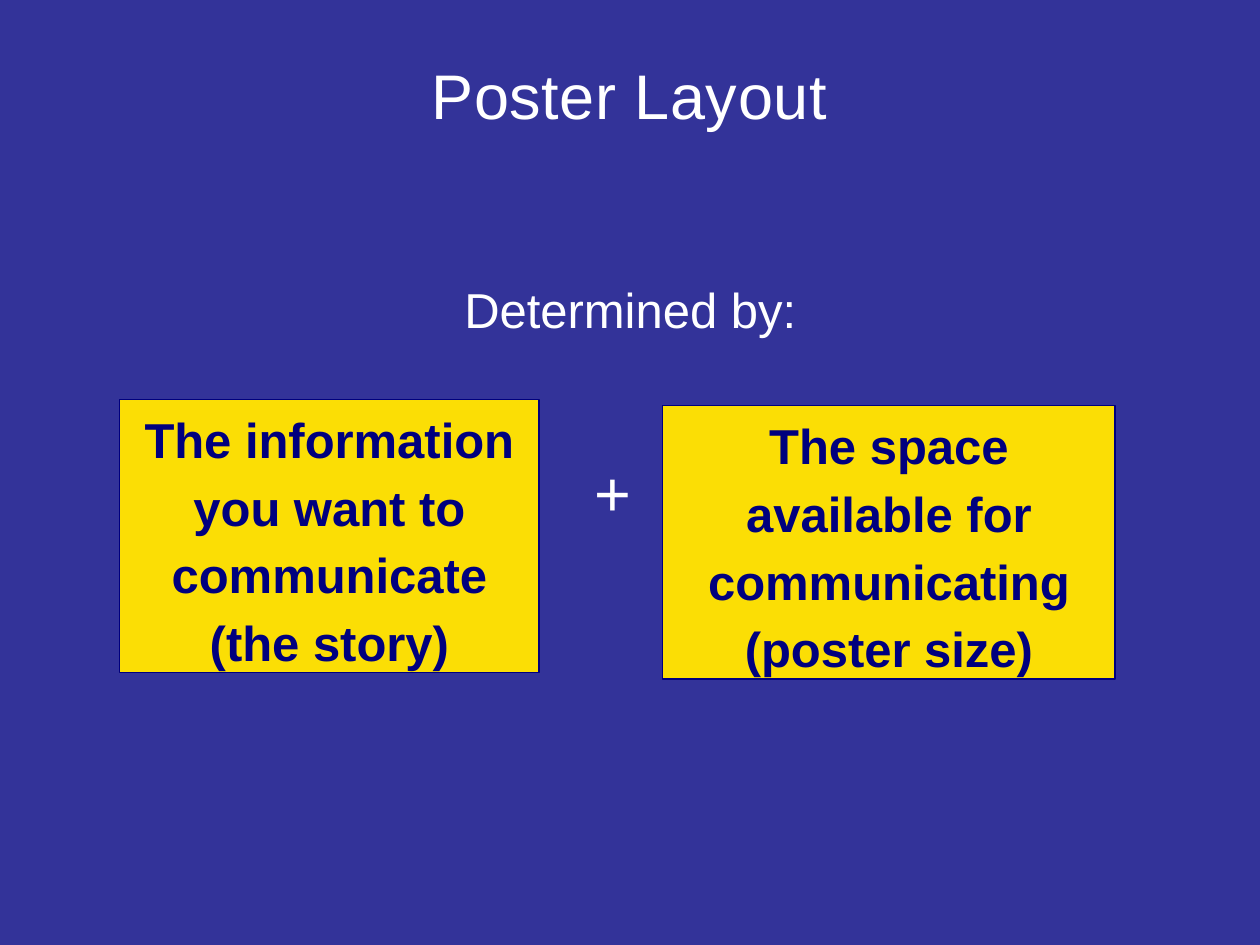
import pptx
import pptx.dml.color
import pptx.enum.shapes
import pptx.enum.text
import pptx.util

Cm = pptx.util.Cm
Pt = pptx.util.Pt
RGB = pptx.dml.color.RGBColor.from_string
Align = pptx.enum.text.PP_ALIGN
Anchor = pptx.enum.text.MSO_ANCHOR

THEME = {
    "font": "Arial",
    "background": RGB("333399"),
    "light": RGB("FFFFFF"),
    "dark": RGB("00007E"),
    "box": RGB("FBDE05"),
    "large": Pt(36),
    "body": Pt(28),
    "outline": Pt(0.75),
}


def set_attributes(target, values):
    for name, value in values.items():
        setattr(target, name, value)


def write_text(shape, lines, frame_format, paragraph_format, font_format):
    frame = shape.text_frame
    frame.text = "\n".join(lines)
    set_attributes(frame, frame_format)
    for paragraph in frame.paragraphs:
        set_attributes(paragraph, paragraph_format)
        for run in paragraph.runs:
            set_attributes(run.font, {"name": THEME["font"], **font_format})
            run.font.color.rgb = THEME["dark" if run.font.bold else "light"]


presentation = pptx.Presentation()
set_attributes(presentation, {"slide_width": Cm(25.4), "slide_height": Cm(19.05)})
slide = presentation.slides.add_slide(presentation.slide_layouts[6])
slide.background.fill.solid()
slide.background.fill.fore_color.rgb = THEME["background"]

spaced = {"alignment": Align.CENTER, "line_spacing": 1.15}
labels = [
    ("Poster Layout", (0.94, 1.02, 23.5, 1.8), True, "large",
     {"alignment": Align.CENTER, "space_before": Pt(6)}),
    ("Determined by:", (7.37, 5.33, 10.67, 1.47), True, "body", spaced),
    ("+", (11.73, 9.02, 1.27, 1.8), False, "large", {"alignment": Align.LEFT}),
]
for text, position, wrap, size, paragraph_format in labels:
    label = slide.shapes.add_textbox(*map(Cm, position))
    write_text(label, [text], {"word_wrap": wrap}, paragraph_format, {"size": THEME[size]})

title_run = slide.shapes[0].text_frame.paragraphs[0].runs[0]
title_run.font._element.set("spc", "30")

factors = [
    (["The information you want to communicate", "(the story)"], (2.41, 8.05, 8.46, 5.51)),
    (["The space available for communicating", "(poster size)"], (13.36, 8.18, 9.12, 5.51)),
]
for lines, position in factors:
    box = slide.shapes.add_shape(pptx.enum.shapes.MSO_SHAPE.RECTANGLE, *map(Cm, position))
    box.shadow.inherit = False
    box.fill.solid()
    box.fill.fore_color.rgb = THEME["box"]
    box.line.color.rgb = THEME["dark"]
    box.line.width = THEME["outline"]
    write_text(box, lines, {"word_wrap": True, "vertical_anchor": Anchor.MIDDLE},
               spaced, {"size": THEME["body"], "bold": True})

presentation.save("out.pptx")
